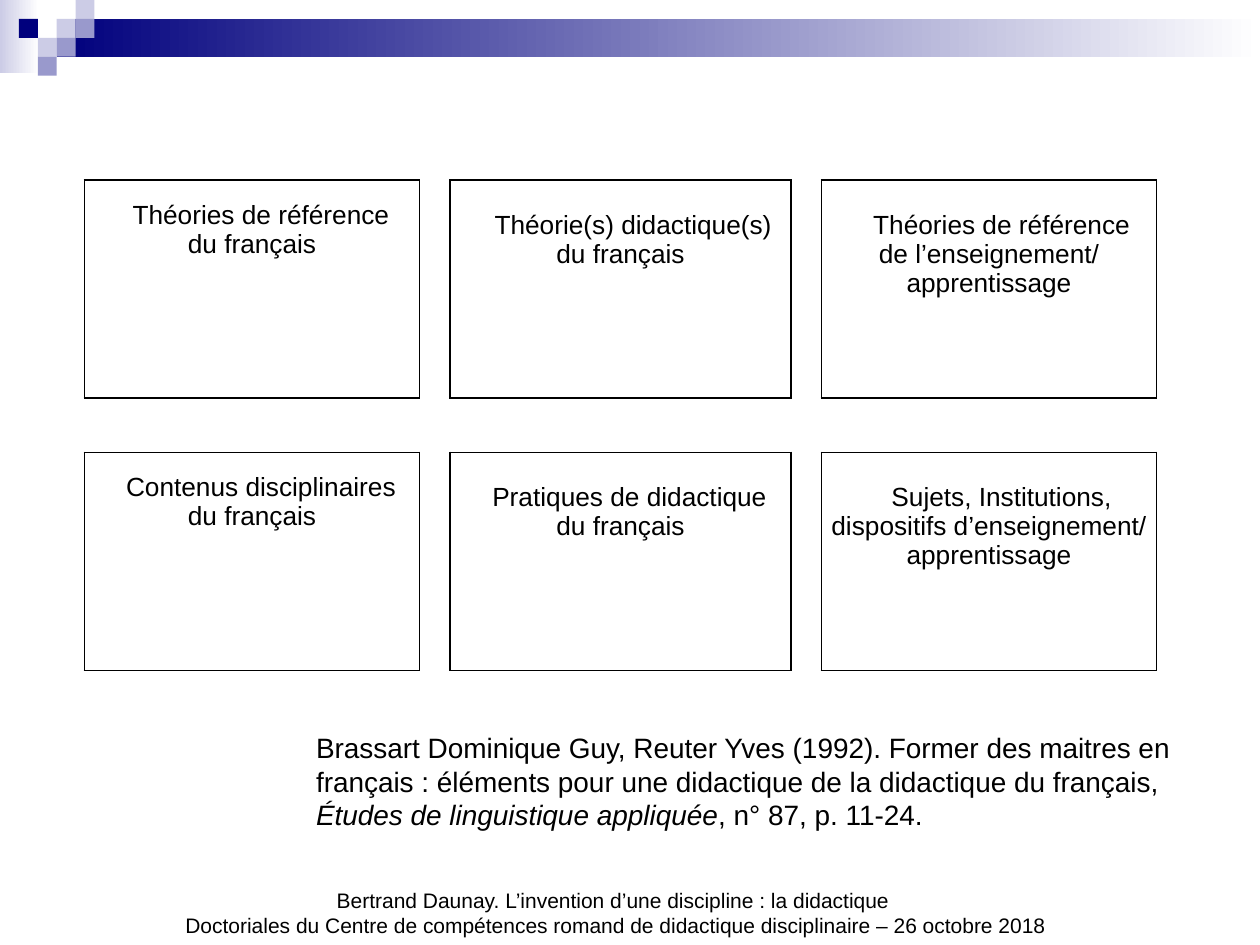
from lxml import etree
from pptx import Presentation
from pptx.dml.color import RGBColor
from pptx.enum import shapes, text
from pptx.oxml.ns import qn
from pptx.util import Inches, Pt

HUES = {"navy": "00007D", "mid": "9999CC", "pale": "CCCCE6", "white": "FFFFFF", "ink": "000000"}
BANDS = [(0, 0, 0.31, 0.58, "pale"), (0.45, 0.15, 9.55, 0.3, "navy")]
UNIT = 0.15
TILES = [(3, 1, "pale"), (4, 0, "pale"), (4, 1, "mid"), (2, 2, "pale"),
         (1, 1, "navy"), (3, 2, "mid"), (2, 3, "mid")]
BOXES = [
    ["Théories de référence \ndu français", "Théorie(s) didactique(s)\ndu français",
     "Théories de référence de l’enseignement/\napprentissage"],
    ["Contenus disciplinaires \ndu français", "Pratiques de didactique \ndu français",
     "Sujets, Institutions, dispositifs d’enseignement/\napprentissage"],
]
COLS = [2.66, 0.24, 2.71, 0.24, 2.66]
ROWS = [1.73, 0.43, 1.73]
TOPS = [0.16, 0.24, 0.24]
SOURCE = [
    ("Brassart Dominique Guy, Reuter Yves (1992).\u00a0Former des maitres en français\u00a0: "
     "éléments pour une didactique de la didactique du français, ", False),
    ("Études de linguistique appliquée", True),
    (", n°\u00a087, p. 11-24.", False),
]
FOOT = ["Bertrand Daunay. L’invention d’une discipline\u00a0: la didactique ",
        "Doctoriales du Centre de compétences romand de didactique disciplinaire – 26 octobre 2018"]


def hue(name):
    return RGBColor.from_string(HUES[name])


def block(slide, x, y, w, h, tone, fade=False):
    box = slide.shapes.add_shape(shapes.MSO_SHAPE.RECTANGLE, *map(Inches, (x, y, w, h)))
    box.shadow.inherit = False
    box.line.fill.background()
    if fade:
        box.fill.gradient()
        box.fill.gradient_angle = 0
        for stop, name, pos in zip(box.fill.gradient_stops, (tone, "white"), (0, 1)):
            stop.color.rgb = hue(name)
            stop.position = pos
    else:
        box.fill.solid()
        box.fill.fore_color.rgb = hue(tone)


def style(para, size):
    for run in para.runs:
        run.font.name = "Arial"
        run.font.size = Pt(size)
        run.font.color.rgb = hue("ink")


def border(cell, sides):
    props = cell._tc.get_or_add_tcPr()
    for spot, side in enumerate("LRTB"):
        line = etree.Element(qn("a:ln" + side), w=str(Pt(1)))
        if side in sides:
            fill = etree.SubElement(line, qn("a:solidFill"))
            etree.SubElement(fill, qn("a:srgbClr"), val=HUES["ink"])
        else:
            etree.SubElement(line, qn("a:noFill"))
        props.insert(spot, line)


def grid(slide):
    table = slide.shapes.add_table(len(ROWS), len(COLS), Inches(0.67), Inches(1.43),
                                   Inches(sum(COLS)), Inches(sum(ROWS))).table
    table.first_row = table.horz_banding = False
    for col, width in zip(table.columns, COLS):
        col.width = Inches(width)
    for row, height in zip(table.rows, ROWS):
        row.height = Inches(height)
    for r in range(len(ROWS)):
        for c in range(len(COLS)):
            cell = table.cell(r, c)
            cell.fill.background()
            border(cell, ("" if c % 2 and r % 2 else "LR" if c % 2 else "TB" if r % 2 else "LRTB"))
            if r % 2 or c % 2:
                continue
            cell.margin_left = cell.margin_right = Inches(0.07)
            cell.margin_top, cell.margin_bottom = Inches(TOPS[c // 2]), 0
            para = cell.text_frame.paragraphs[0]
            para.text = BOXES[r // 2][c // 2].replace("\n", "\v")
            para.alignment = text.PP_ALIGN.CENTER
            props = para._p.get_or_add_pPr()
            props.set("marL", "0")
            props.set("indent", str(Inches(0.2)))
            style(para, 15)


def frame(slide, x, y, w, h):
    body = slide.shapes.add_textbox(*map(Inches, (x, y, w, h))).text_frame
    body.word_wrap = True
    return body


def main():
    """Build the slide with the six theory and practice boxes."""
    deck = Presentation()
    deck.slide_width, deck.slide_height = Inches(10), Inches(7.5)
    slide = deck.slides.add_slide(deck.slide_layouts[6])
    for band in BANDS:
        block(slide, *band, fade=True)
    for col, row, tone in TILES:
        block(slide, col * UNIT, row * UNIT, UNIT, UNIT, tone)

    foot = frame(slide, 0.28, 6.99, 9.22, 0.5)
    foot.vertical_anchor = text.MSO_ANCHOR.BOTTOM
    foot.text = "\n".join(FOOT)
    for para in foot.paragraphs:
        para.alignment = text.PP_ALIGN.CENTER
        style(para, 12)

    grid(slide)

    cite = frame(slide, 2.41, 5.75, 7.09, 0.91).paragraphs[0]
    for words, slant in SOURCE:
        run = cite.add_run()
        run.text = words
        run.font.italic = slant
    style(cite, 16)
    deck.save("out.pptx")


if __name__ == "__main__":
    main()
